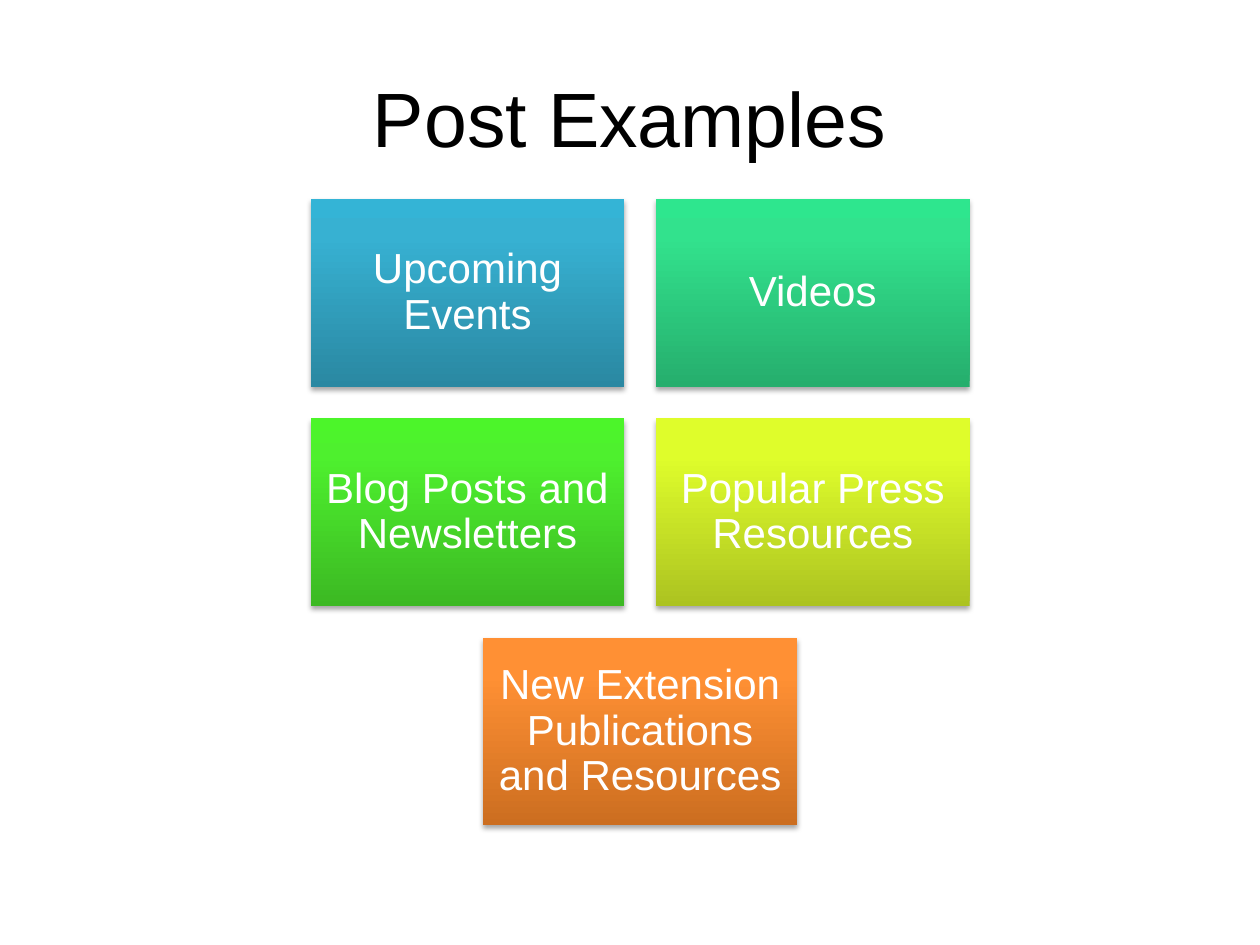
from lxml.etree import SubElement
from pptx import Presentation
from pptx.dml.color import RGBColor
from pptx.enum.shapes import MSO_SHAPE
from pptx.enum.text import MSO_ANCHOR, PP_ALIGN
from pptx.oxml.ns import qn
from pptx.util import Inches, Pt

BLACK = RGBColor(0x00, 0x00, 0x00)
WHITE = RGBColor(0xFF, 0xFF, 0xFF)
BLUE = [RGBColor(0x2A, 0x88, 0xA2), RGBColor(0x37, 0xB1, 0xD2), RGBColor(0x34, 0xB4, 0xD6)]
MINT = [RGBColor(0x26, 0xAE, 0x6D), RGBColor(0x32, 0xE2, 0x8D), RGBColor(0x2E, 0xE6, 0x8E)]
GREEN = [RGBColor(0x3C, 0xB9, 0x23), RGBColor(0x4E, 0xF0, 0x2E), RGBColor(0x4C, 0xF5, 0x2A)]
LIME = [RGBColor(0xAC, 0xC3, 0x21), RGBColor(0xDF, 0xFD, 0x2B), RGBColor(0xE1, 0xFF, 0x2B)]
ORANGE = [RGBColor(0xCC, 0x6E, 0x20), RGBColor(0xFF, 0x90, 0x34), RGBColor(0xFF, 0x91, 0x36)]
STOPS = [0, 80, 100]

WIDTH, HEIGHT, GAP = 2.49, 1.49, 0.25
CENTER, TOP = 5.08, 1.58
ROWS = [
    [("Upcoming Events", BLUE), ("Videos", MINT)],
    [("Blog Posts and Newsletters", GREEN), ("Popular Press Resources", LIME)],
    [("New Extension Publications and Resources", ORANGE)],
]


def write(frame, text, size, color, font="Arial", inset=0.1, spacing=1.0):
    frame.word_wrap = True
    frame.vertical_anchor = MSO_ANCHOR.MIDDLE
    frame.margin_left = frame.margin_right = Inches(inset)
    frame.margin_top = frame.margin_bottom = Inches(inset)
    para = frame.paragraphs[0]
    para.alignment = PP_ALIGN.CENTER
    para.line_spacing = spacing
    run = para.add_run()
    run.text = text
    run.font.name = font
    run.font.size = Pt(size)
    run.font.color.rgb = color


def add_color(parent, color):
    return SubElement(parent, qn("a:srgbClr"), val=str(color))


class Deck:
    def __init__(self, font="Arial"):
        self.font = font
        self.file = Presentation()
        self.file.slide_width = Inches(10)
        self.file.slide_height = Inches(7.5)
        self.slide = self.file.slides.add_slide(self.file.slide_layouts[5])

    def title(self, text):
        title = self.slide.shapes.title
        title.left, title.top = Inches(0.5), Inches(0.3)
        title.width, title.height = Inches(9), Inches(1.25)
        write(title.text_frame, text, 44, BLACK, font=self.font)

    def tile(self, text, colors, left, top):
        tile = self.slide.shapes.add_shape(
            MSO_SHAPE.RECTANGLE, Inches(left), Inches(top), Inches(WIDTH), Inches(HEIGHT))
        tile.line.fill.background()
        self.shade(tile, colors)
        self.shadow(tile)
        write(tile.text_frame, text, 24, WHITE, font=self.font, spacing=0.9)

    def shade(self, shape, colors):
        shape.fill.gradient()
        shape.fill.gradient_angle = 90
        stops = shape.element.spPr.find(".//" + qn("a:gsLst"))
        for stop in list(stops):
            stops.remove(stop)
        for place, color in zip(STOPS, colors):
            add_color(SubElement(stops, qn("a:gs"), pos=str(place * 1000)), color)

    def shadow(self, shape):
        shape.shadow.inherit = False
        effects = shape.element.spPr.find(qn("a:effectLst"))
        outer = SubElement(effects, qn("a:outerShdw"), blurRad=str(Pt(3.1)),
                           dist=str(Pt(1.8)), dir="5400000", rotWithShape="0")
        SubElement(add_color(outer, BLACK), qn("a:alpha"), val="35000")

    def grid(self, rows):
        for index, row in enumerate(rows):
            span = len(row) * (WIDTH + GAP) - GAP
            for column, (text, colors) in enumerate(row):
                left = CENTER - span / 2 + column * (WIDTH + GAP)
                self.tile(text, colors, left, TOP + index * (HEIGHT + GAP))


def main():
    deck = Deck()
    deck.title("Post Examples")
    deck.grid(ROWS)
    deck.file.save("out.pptx")


if __name__ == "__main__":
    main()
